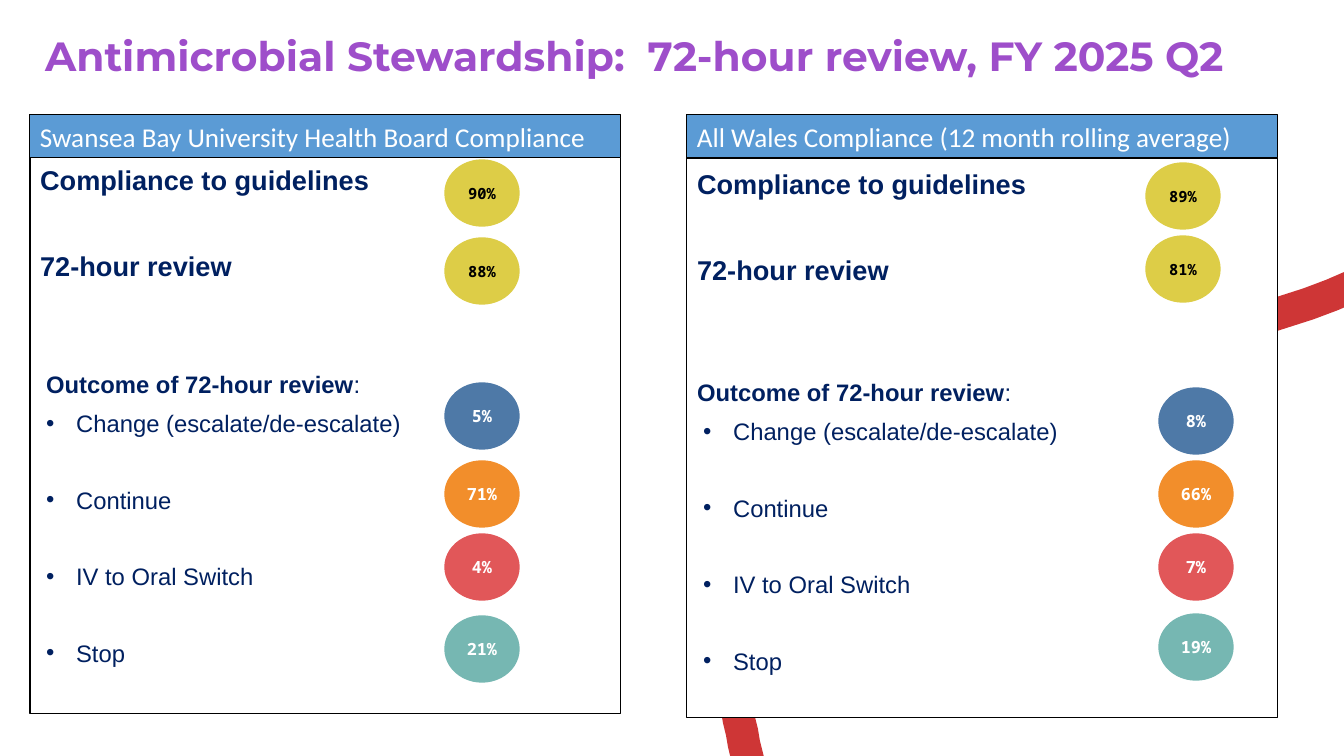
import pptx
import pptx.dml.color
import pptx.enum.shapes
import pptx.enum.text
import pptx.oxml
import pptx.oxml.ns
import pptx.util

SCALE = 12192000 / 1344
SHAPES = pptx.enum.shapes.MSO_SHAPE
ALIGN = pptx.enum.text.PP_ALIGN
ANCHOR = pptx.enum.text.MSO_ANCHOR
NO_FIT = pptx.enum.text.MSO_AUTO_SIZE.NONE

PURPLE, NAVY, BLUE = "9E4ECA", "002060", "5B9BD5"
WHITE, BLACK, RED = "FFFFFF", "000000", "CE3636"
YELLOW = "DDCD47"
OUTCOMES = {
    "Change (escalate/de-escalate)": "4E79A7",
    "Continue": "F28E2B",
    "IV to Oral Switch": "E15759",
    "Stop": "76B7B2",
}
RIBBON_CURVES = [
    ([(1409, 253), (1244, 376), (900, 330), (771, 510)], 0.1, 1),
    ([(771, 510), (645, 686), (864, 979), (870, 1245)], 0, 0.4),
]
PANELS = [
    {
        "heading": "Swansea Bay University Health Board Compliance",
        "left": 30, "top": 154, "indent": 6, "outcome_gap": 59.8,
        "scores": [(445, 160, "90%"), (445, 238, "88%")],
        "shares": [(445, 383, "5%"), (445, 461, "71%"),
                   (445, 534, "4%"), (445, 616, "21%")],
    },
    {
        "heading": "All Wales Compliance (12 month rolling average)",
        "left": 687, "top": 158, "indent": 0, "outcome_gap": 62.7,
        "scores": [(1146, 163, "89%"), (1146, 236, "81%")],
        "shares": [(1159, 388, "8%"), (1159, 461, "66%"),
                   (1159, 534, "7%"), (1159, 614, "19%")],
    },
]


def px(length):
    return pptx.util.Emu(round(length * SCALE))


def color(value):
    return pptx.dml.color.RGBColor.from_string(value)


def apply(target, values):
    for name, value in values.items():
        setattr(target, name, value)


def place(shape, left, top, width, height):
    apply(shape, {"left": px(left), "top": px(top),
                  "width": px(width), "height": px(height)})


def paint(shape, fill, line, weight):
    shape.fill.solid()
    shape.fill.fore_color.rgb = color(fill)
    shape.line.color.rgb = color(line)
    shape.line.width = pptx.util.Pt(weight)


def add_span(para, text, font, size, ink, bold=False):
    span = para.add_run()
    span.text = text
    apply(span.font, {"name": font, "size": pptx.util.Pt(size), "bold": bold})
    span.font.color.rgb = color(ink)


def add_ribbon(page):
    points = []
    for (a, b, c, d), start, stop in RIBBON_CURVES:
        for step in range(25):
            t = start + (stop - start) * step / 24
            u = 1 - t
            points.append(tuple(
                round(u**3 * a[i] + 3 * u * u * t * b[i] + 3 * u * t * t * c[i] + t**3 * d[i])
                for i in (0, 1)))
    builder = page.shapes.build_freeform(*points[0], scale=SCALE)
    builder.add_line_segments(points[1:], close=False)
    ribbon = builder.convert_to_shape()
    ribbon.shadow.inherit = False
    ribbon.fill.background()
    ribbon.line.color.rgb = color(RED)
    ribbon.line.width = pptx.util.Pt(23.25)
    page.shapes._spTree.insert(2, ribbon._element)


def add_title(page, text):
    title = page.shapes.title
    place(title, 35, 26, 1275, 60)
    apply(title.text_frame, {"word_wrap": False, "auto_size": NO_FIT,
                             "vertical_anchor": ANCHOR.TOP})
    para = title.text_frame.paragraphs[0]
    para.alignment = ALIGN.LEFT
    add_span(para, text, "Montserrat", 29.1, PURPLE, True)


def add_line(frame, text, size, gap, indent=0, bullet=False, bold=True):
    para = frame.paragraphs[0]
    if para.runs:
        para = frame.add_paragraph()
    apply(para, {"alignment": ALIGN.LEFT, "line_spacing": 1.14,
                 "space_before": pptx.util.Pt(gap), "space_after": pptx.util.Pt(0)})
    properties = para._p.get_or_add_pPr()
    properties.set("marL", str(px(indent)))
    properties.set("indent", str(px(-30 if bullet else 0)))
    marks = ['buFont typeface="Arial"', 'buChar char="•"'] if bullet else ["buNone"]
    for mark in marks:
        properties.append(pptx.oxml.parse_xml(f"<a:{mark} {pptx.oxml.ns.nsdecls('a')}/>"))
    add_span(para, text, "Arial", size, NAVY, bold)
    return para


def fill_panel(body, panel):
    place(body, panel["left"], panel["top"], 591, 560)
    paint(body, WHITE, BLACK, 0.75)
    frame = body.text_frame
    apply(frame, {"word_wrap": True, "auto_size": NO_FIT, "vertical_anchor": ANCHOR.TOP})
    add_line(frame, "Compliance to guidelines", 19.4, 0)
    add_line(frame, "72-hour review", 19.4, 34.6)
    outcome = add_line(frame, "Outcome of 72-hour review", 17,
                       panel["outcome_gap"], panel["indent"])
    add_span(outcome, ":", "Arial", 17, NAVY)
    for index, label in enumerate(OUTCOMES):
        add_line(frame, label, 17, 31.4 if index else 4.8, 36, True, False)


def add_label_shape(page, kind, bounds, fill, line, weight):
    shape = page.shapes.add_shape(kind, *map(px, bounds))
    shape.shadow.inherit = False
    paint(shape, fill, line, weight)
    return shape


def add_heading(page, panel):
    bar = add_label_shape(page, SHAPES.RECTANGLE, (panel["left"], 115, 591, 43),
                          BLUE, BLACK, 0.75)
    apply(bar.text_frame, {"word_wrap": True, "vertical_anchor": ANCHOR.TOP})
    para = bar.text_frame.paragraphs[0]
    para.alignment = ALIGN.LEFT
    add_span(para, panel["heading"], "Calibri", 19.4, WHITE)


def add_bubble(page, left, top, text, fill, size, ink):
    bubble = add_label_shape(page, SHAPES.OVAL, (left, top, 74, 66), fill, fill, 1)
    apply(bubble.text_frame, {"word_wrap": False, "vertical_anchor": ANCHOR.MIDDLE,
                              "margin_left": 0, "margin_right": 0})
    para = bubble.text_frame.paragraphs[0]
    para.alignment = ALIGN.CENTER
    add_span(para, text, "Noto Sans Mono", size, ink, True)


def main():
    deck = pptx.Presentation()
    apply(deck, {"slide_width": px(1344), "slide_height": px(756)})
    page = deck.slides.add_slide(deck.slide_layouts[3])
    add_ribbon(page)
    add_title(page, "Antimicrobial Stewardship:  72-hour review, FY 2025 Q2")
    for number, panel in enumerate(PANELS, 1):
        fill_panel(page.placeholders[number], panel)
        add_heading(page, panel)
        for score in panel["scores"]:
            add_bubble(page, *score, YELLOW, 11, BLACK)
        for share, fill in zip(panel["shares"], OUTCOMES.values()):
            add_bubble(page, *share, fill, 12, WHITE)
    deck.save("out.pptx")


if __name__ == "__main__":
    main()
